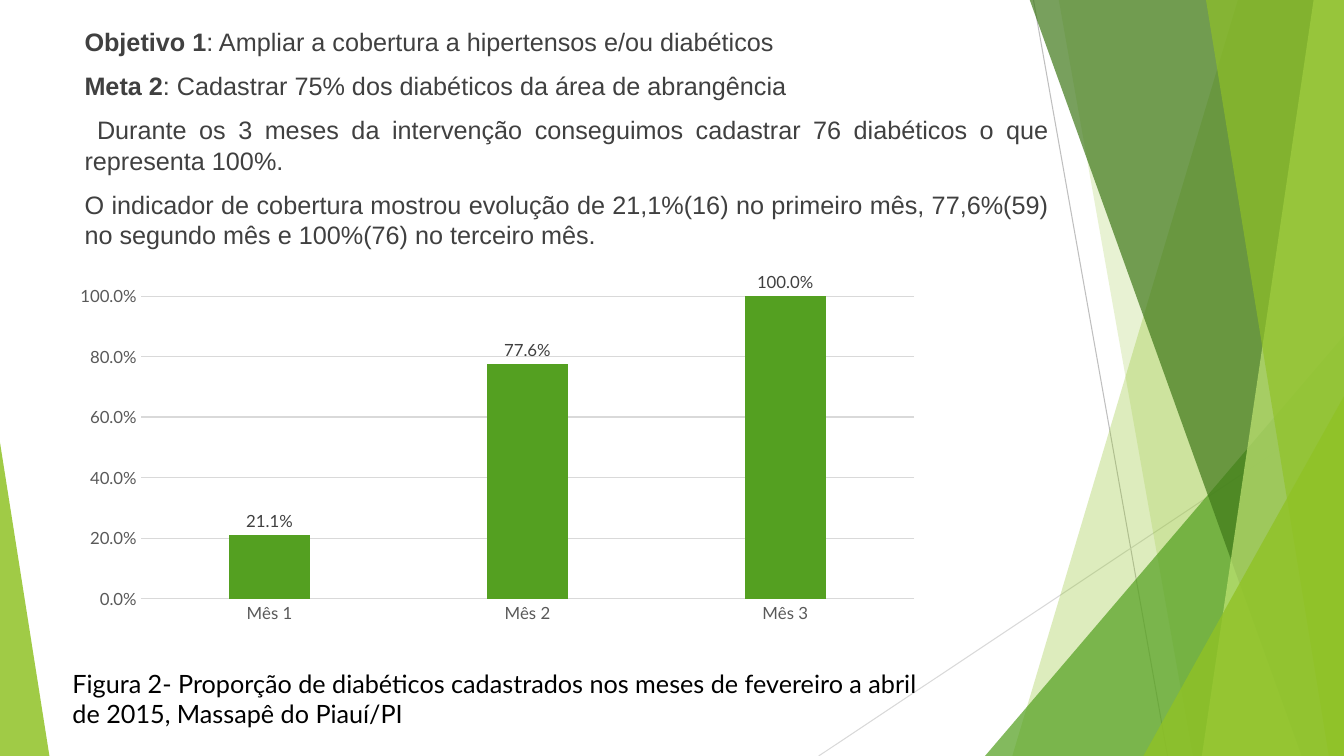
from dataclasses import dataclass

from lxml import etree
from pptx import Presentation
from pptx import util as u
from pptx.chart.data import CategoryChartData
from pptx.dml.color import RGBColor
from pptx.enum import chart as charts, shapes, text
from pptx.oxml import parse_xml
from pptx.oxml.ns import nsdecls, qn

PX = 9144
WIDTH, HEIGHT = 1333, 750

LIME = RGBColor(0x90, 0xC2, 0x26)
PALE_LIME = RGBColor(0xC0, 0xE4, 0x74)
GREEN = RGBColor(0x54, 0xA0, 0x21)
DARK_GREEN = RGBColor(0x3F, 0x78, 0x19)
BLACK = RGBColor(0, 0, 0)
INK = RGBColor(0x40, 0x40, 0x40)
AXIS_INK = RGBColor(0x59, 0x59, 0x59)
MID_GRAY = RGBColor(0xBF, 0xBF, 0xBF)
LIGHT_GRAY = RGBColor(0xD9, 0xD9, 0xD9)


@dataclass
class Ray:
    x1: int
    y1: int
    x2: int
    y2: int
    color: RGBColor


@dataclass
class Blade:
    top: int
    bottom: int
    color: RGBColor
    alpha: int


@dataclass
class Wedge:
    left: int
    top: int
    width: int
    apex: int
    color: RGBColor
    alpha: int


RAYS = [
    Ray(1025, 0, 1158, HEIGHT, MID_GRAY),
    Ray(WIDTH, 403, 812, HEIGHT, LIGHT_GRAY),
]
FACETS = [
    Blade(1228, 1004, LIME, 30),
    Blade(1050, 1183, LIME, 20),
    Wedge(977, 333, 356, 1, GREEN, 72),
    Blade(1021, 1291, DARK_GREEN, 70),
    Blade(1303, 1192, PALE_LIME, 70),
    Blade(1196, 1318, LIME, 65),
    Wedge(1134, 393, 199, 1, LIME, 80),
    Wedge(0, 439, 49, 0, LIME, 85),
]
GOALS = [
    ("Objetivo 1", ": Ampliar a cobertura a hipertensos e/ou diabéticos"),
    ("Meta 2", ": Cadastrar 75% dos diabéticos da área de abrangência"),
    ("", " Durante os 3 meses da intervenção conseguimos cadastrar 76 diabéticos "
         "o que representa 100%."),
    ("", "O indicador de cobertura mostrou evolução de 21,1%(16) no primeiro mês, "
         "77,6%(59) no segundo mês e 100%(76) no terceiro mês."),
]
CAPTION = ("Figura 2- Proporção de diabéticos cadastrados nos meses de fevereiro "
           "a abril de 2015, Massapê do Piauí/PI")


def px(*lengths: int) -> list[int]:
    return [n * PX for n in lengths]


def draw_ray(slide, ray: Ray) -> None:
    line = slide.shapes.add_connector(
        shapes.MSO_CONNECTOR.STRAIGHT, *px(ray.x1, ray.y1, ray.x2, ray.y2))
    line.line.color.rgb = ray.color
    line.line.width = u.Pt(0.75)
    etree.SubElement(line._element.spPr, qn("a:effectLst"))


def paint(sp, color: RGBColor, alpha: int) -> None:
    sp.shadow.inherit = False
    sp.line.fill.background()
    sp.fill.solid()
    sp.fill.fore_color.rgb = color
    clr = sp._element.spPr.find(qn("a:solidFill")).find(qn("a:srgbClr"))
    etree.SubElement(clr, qn("a:alpha")).set("val", str(alpha * 1000))


def draw_blade(slide, blade: Blade) -> None:
    fb = slide.shapes.build_freeform(blade.top, -1, scale=PX)
    fb.add_line_segments(
        [(WIDTH, -1), (WIDTH, HEIGHT), (blade.bottom, HEIGHT)], close=True)
    paint(fb.convert_to_shape(), blade.color, blade.alpha)


def draw_wedge(slide, wedge: Wedge) -> None:
    sp = slide.shapes.add_shape(
        shapes.MSO_SHAPE.ISOSCELES_TRIANGLE,
        *px(wedge.left, wedge.top, wedge.width, HEIGHT - wedge.top))
    sp.adjustments[0] = wedge.apex
    paint(sp, wedge.color, wedge.alpha)


def add_box(slide, left: int, top: int, width: int, height: int):
    tf = slide.shapes.add_textbox(*px(left, top, width, height)).text_frame
    tf.word_wrap = True
    return tf


def add_run(p, content: str, *, font: str, color: RGBColor, size: int = 18,
            bold: bool = False) -> None:
    r = p.add_run()
    r.text = content
    r.font.name = font
    r.font.size = u.Pt(size)
    r.font.bold = bold
    r.font.color.rgb = color


def draw_goals(slide) -> None:
    tf = add_box(slide, 62, 21, 988, 604)
    for i, (label, body) in enumerate(GOALS):
        p = tf.add_paragraph() if i else tf.paragraphs[0]
        p.alignment = text.PP_ALIGN.JUSTIFY
        p.space_before = u.Pt(10)
        p._p.get_or_add_pPr().set("marL", str(12 * PX))
        if label:
            add_run(p, label, font="Arial", color=INK, bold=True)
        add_run(p, body, font="Arial", color=INK)


def style_font(font, size: int, color: RGBColor) -> None:
    font.name = "Lato"
    font.size = u.Pt(size)
    font.color.rgb = color


def style_line(line, color: RGBColor) -> None:
    line.color.rgb = color
    line.width = u.Pt(0.75)


def fix_plot_area(chart, x: float, y: float, w: float, h: float) -> None:
    area = chart._chartSpace.chart.plotArea
    for old in area.findall(qn("c:layout")):
        area.remove(old)
    area.insert(0, parse_xml(
        f'<c:layout {nsdecls("c")}><c:manualLayout><c:layoutTarget val="inner"/>'
        f'<c:xMode val="edge"/><c:yMode val="edge"/><c:x val="{x}"/><c:y val="{y}"/>'
        f'<c:w val="{w}"/><c:h val="{h}"/></c:manualLayout></c:layout>'))


def draw_chart(slide) -> None:
    data = CategoryChartData(number_format="0.0%")
    data.categories = ["Mês 1", "Mês 2", "Mês 3"]
    data.add_series("Series 1", [0.211, 0.776, 1])
    chart = slide.shapes.add_chart(
        charts.XL_CHART_TYPE.COLUMN_CLUSTERED, *px(62, 270, 862, 354), data).chart
    chart.has_legend = False
    chart.has_title = False
    style_font(chart.font, 10, BLACK)
    fix_plot_area(chart, 0.09, 0.065, 0.89, 0.85)

    months, share = chart.category_axis, chart.value_axis
    for axis in (months, share):
        axis.major_tick_mark = axis.minor_tick_mark = charts.XL_TICK_MARK.NONE
        style_font(axis.tick_labels.font, 12, AXIS_INK)
    style_line(months.format.line, LIGHT_GRAY)
    share.format.line.fill.background()
    share.minimum_scale, share.maximum_scale, share.major_unit = 0, 1, 0.2
    share.has_major_gridlines = True
    style_line(share.major_gridlines.format.line, LIGHT_GRAY)
    share.tick_labels.number_format = "0.0%"
    share.tick_labels.number_format_is_linked = False

    plot = chart.plots[0]
    plot.gap_width, plot.overlap = 219, -27
    plot.vary_by_categories = False
    bars = plot.series[0]
    bars.format.fill.solid()
    bars.format.fill.fore_color.rgb = GREEN
    labels = bars.data_labels
    labels.show_value = True
    labels.position = charts.XL_LABEL_POSITION.OUTSIDE_END
    labels.number_format = "0.0%"
    labels.number_format_is_linked = False
    style_font(labels.font, 12, INK)


def main() -> None:
    prs = Presentation()
    prs.slide_width, prs.slide_height = px(WIDTH, HEIGHT)
    slide = prs.slides.add_slide(prs.slide_layouts[6])
    for ray in RAYS:
        draw_ray(slide, ray)
    for facet in FACETS:
        if isinstance(facet, Blade):
            draw_blade(slide, facet)
        else:
            draw_wedge(slide, facet)
    draw_goals(slide)
    draw_chart(slide)
    caption = add_box(slide, 62, 658, 875, 101)
    add_run(caption.paragraphs[0], CAPTION, font="Lato", color=BLACK)
    prs.save("out.pptx")


if __name__ == "__main__":
    main()
